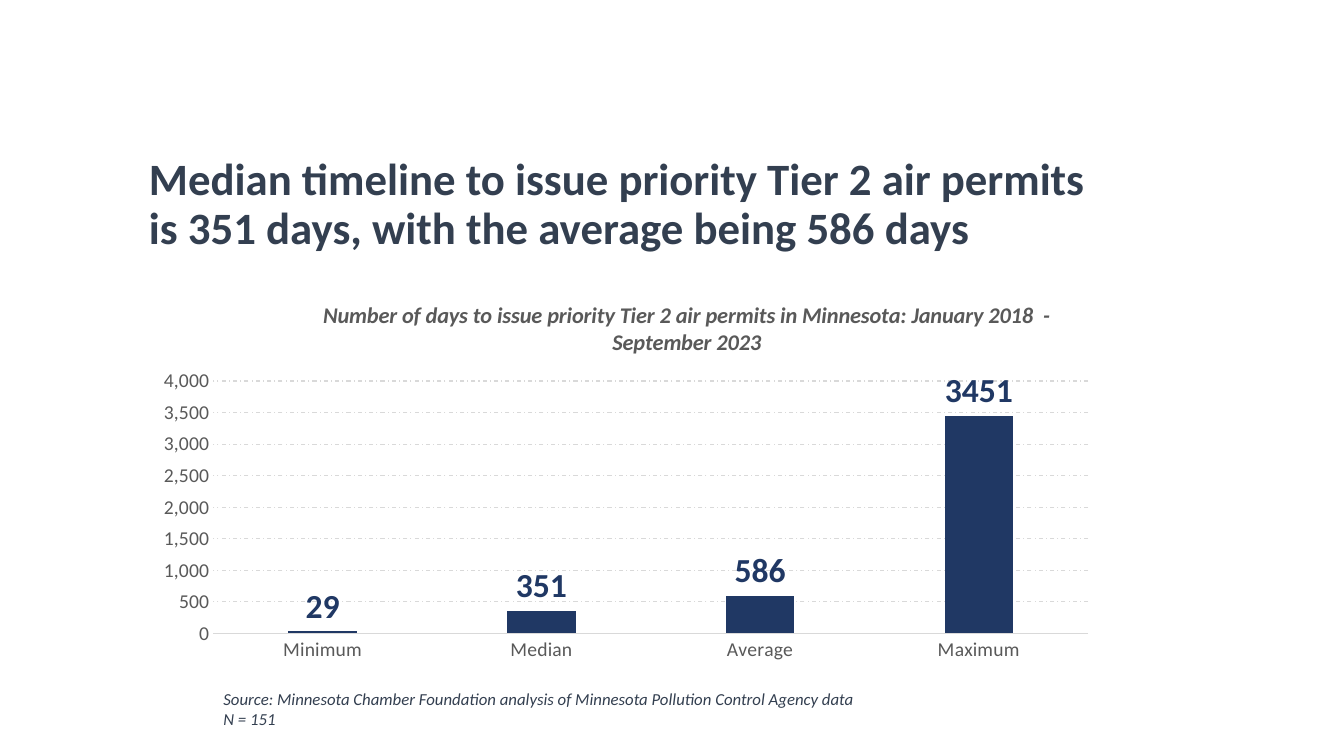
from dataclasses import dataclass

from lxml import etree
from pptx import Presentation
from pptx import util as u
from pptx.chart.data import CategoryChartData
from pptx.dml.color import RGBColor
from pptx.enum import chart as charts, dml, text
from pptx.oxml import parse_xml
from pptx.oxml.ns import nsdecls, qn


@dataclass(frozen=True)
class Theme:
    font: str = "Calibri"
    ink: str = "333F50"
    bar: str = "203864"
    muted: str = "595959"
    rule: str = "D9D9D9"
    title: int = 32
    value: int = 24
    heading: int = 16
    axis: int = 14
    source: int = 12


def place(shape, left, top, width, height):
    shape.left, shape.top = u.Cm(left), u.Cm(top)
    shape.width, shape.height = u.Cm(width), u.Cm(height)


def rule_line(line, color):
    line.color.rgb = RGBColor.from_string(color)
    line.width = u.Pt(0.75)


def chart_layout(**fractions):
    """Manual layout element; positions are fractions of the chart."""
    layout = parse_xml(f"<c:layout {nsdecls('c')}><c:manualLayout/></c:layout>")
    for name, value in fractions.items():
        etree.SubElement(layout[0], qn(f"c:{name}")).set("val", str(value))
    return layout


class SlideBuilder:
    def __init__(self, deck, theme):
        self.theme = theme
        self.page = deck.slides.add_slide(deck.slide_layouts[5])

    def style(self, font, size, color, bold=False, italic=False):
        font.name, font.size = self.theme.font, u.Pt(size)
        font.bold, font.italic = bold, italic
        font.color.rgb = RGBColor.from_string(color)

    def fill_text(self, frame, words, align=text.PP_ALIGN.LEFT, spacing=1.0, **look):
        """Fill a text frame, one paragraph per line of words."""
        frame.text = words
        for para in frame.paragraphs:
            para.alignment, para.line_spacing = align, spacing
            for span in para.runs:
                self.style(span.font, **look)

    def title(self, words, *bounds):
        box = self.page.shapes.title
        place(box, *bounds)
        frame = box.text_frame
        frame.word_wrap = True
        frame.auto_size = text.MSO_AUTO_SIZE.NONE
        frame.vertical_anchor = text.MSO_ANCHOR.MIDDLE
        self.fill_text(frame, words, spacing=0.9, size=self.theme.title,
                       color=self.theme.ink, bold=True)

    def source_note(self, words, *bounds):
        box = self.page.shapes.add_textbox(*map(u.Cm, bounds))
        box.text_frame.word_wrap = True
        self.fill_text(box.text_frame, words, size=self.theme.source,
                       color=self.theme.ink, italic=True)

    def column_chart(self, heading, values, *bounds):
        theme = self.theme
        data = CategoryChartData()
        data.categories = list(values)
        data.add_series("Series 1", list(values.values()))
        chart = self.page.shapes.add_chart(
            charts.XL_CHART_TYPE.COLUMN_CLUSTERED, *map(u.Cm, bounds), data).chart
        self.style(chart.font, theme.axis, theme.muted)
        chart.has_legend = False

        chart.has_title = True
        self.fill_text(chart.chart_title.text_frame, heading,
                       align=text.PP_ALIGN.CENTER, size=theme.heading,
                       color=theme.muted, bold=True, italic=True)
        chart.chart_title.include_in_layout = False
        self.set_layouts(chart)

        for axis in (chart.category_axis, chart.value_axis):
            axis.major_tick_mark = axis.minor_tick_mark = charts.XL_TICK_MARK.NONE
            self.style(axis.tick_labels.font, theme.axis, theme.muted)
        rule_line(chart.category_axis.format.line, theme.rule)

        days = chart.value_axis
        days.minimum_scale, days.maximum_scale, days.major_unit = 0, 4000, 500
        days.tick_labels.number_format = "#,##0"
        days.tick_labels.number_format_is_linked = False
        days.format.line.fill.background()
        grid = days.major_gridlines.format.line
        rule_line(grid, theme.rule)
        grid.dash_style = dml.MSO_LINE.DASH_DOT

        plot = chart.plots[0]
        plot.gap_width, plot.overlap, plot.vary_by_categories = 219, -27, False
        series = plot.series[0]
        series.format.fill.solid()
        series.format.fill.fore_color.rgb = RGBColor.from_string(theme.bar)
        labels = series.data_labels
        labels.show_value = True
        labels.position = charts.XL_LABEL_POSITION.OUTSIDE_END
        self.style(labels.font, theme.value, theme.bar, bold=True)

    def set_layouts(self, chart):
        root = chart.element if hasattr(chart, "element") else chart._chartSpace
        areas = (
            (root.find(".//" + qn("c:title")), 1,
             dict(xMode="edge", yMode="edge", x=0.18, y=0.04)),
            (root.find(".//" + qn("c:plotArea")), 0,
             dict(layoutTarget="inner", xMode="edge", yMode="edge",
                  x=0.07, y=0.26, w=0.91, h=0.65)),
        )
        for area, index, fractions in areas:
            for old in area.findall(qn("c:layout")):
                area.remove(old)
            area.insert(index, chart_layout(**fractions))


def main():
    deck = Presentation()
    deck.slide_width, deck.slide_height = u.Cm(33.87), u.Cm(19.05)
    slide = SlideBuilder(deck, Theme())
    slide.source_note(
        "Source: Minnesota Chamber Foundation analysis of Minnesota Pollution "
        "Control Agency data\nN = 151", 5.38, 17.22, 16.64, 1.27)
    slide.title(
        "Median timeline to issue priority Tier 2 air permits is 351 days, "
        "with the average being 586 days", 3.5, 3.96, 24.77, 2.44)
    slide.column_chart(
        "Number of days to issue priority Tier 2 air permits in Minnesota: "
        "January 2018  - September 2023",
        {"Minimum": 29, "Median": 351, "Average": 586, "Maximum": 3451},
        3.68, 7.06, 24.23, 9.78)
    deck.save("out.pptx")


if __name__ == "__main__":
    main()
